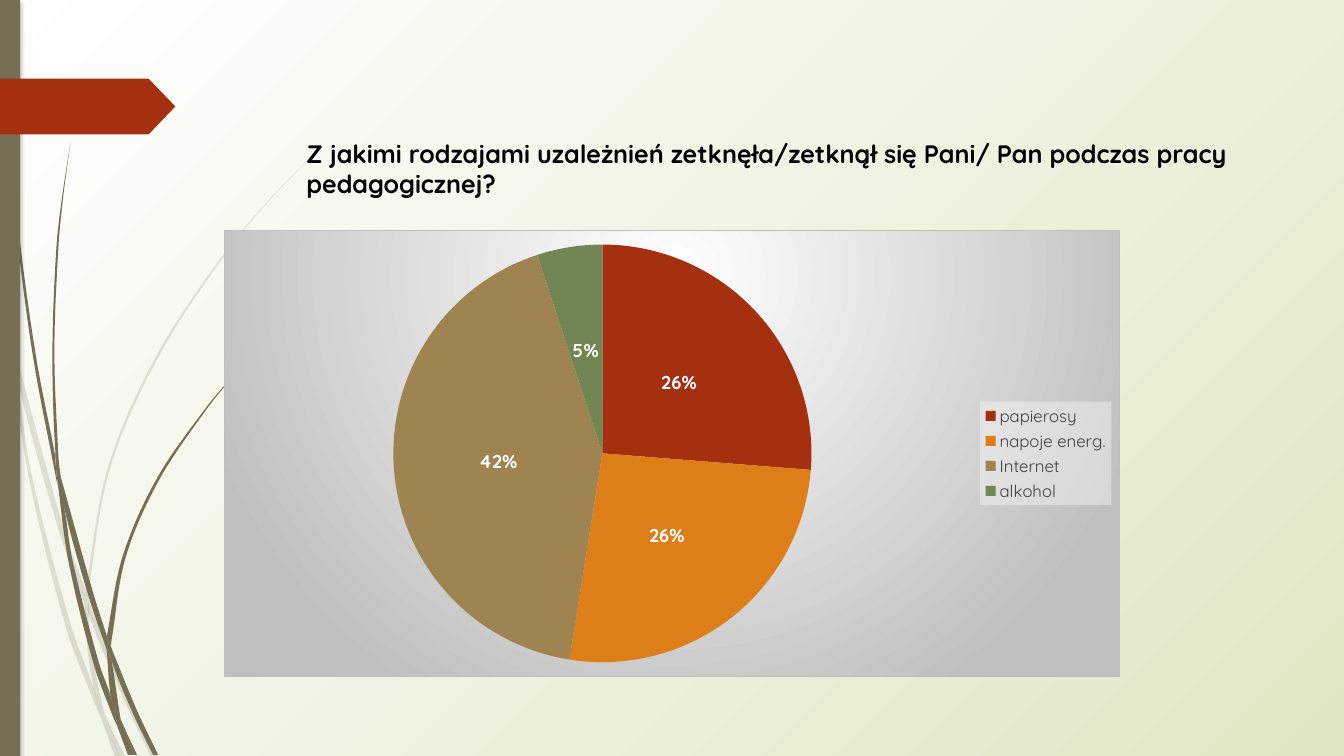
from itertools import pairwise
from lxml import etree
from pptx import Presentation
from pptx.chart.data import CategoryChartData
from pptx.dml.color import RGBColor
from pptx.enum.chart import XL_CHART_TYPE as ChartType, XL_LABEL_POSITION as LabelPosition
from pptx.enum.chart import XL_LEGEND_POSITION as LegendPosition
from pptx.enum.shapes import MSO_SHAPE as Shape
from pptx.enum.text import MSO_ANCHOR as Anchor, PP_ALIGN as Align
from pptx.oxml import parse_xml
from pptx.oxml.ns import nsdecls, qn
from pptx.util import Cm, Pt

QUESTION = "Z jakimi rodzajami uzależnień zetknęła/zetknął się Pani/ Pan podczas pracy pedagogicznej?"
FONT = "Quicksand"
WHITE = RGBColor(0xFF, 0xFF, 0xFF)
BLACK = RGBColor(0, 0, 0)
GREY = RGBColor(0x40, 0x40, 0x40)
SILVER = RGBColor(0xBF, 0xBF, 0xBF)
PALE_GREEN = RGBColor(0xDF, 0xE7, 0xC4)
TAUPE = RGBColor(0x76, 0x6F, 0x54)
RED = RGBColor(0xA5, 0x30, 0x10)
ORANGE = RGBColor(0xDE, 0x7E, 0x18)
SAND = RGBColor(0x9F, 0x83, 0x51)
GREEN = RGBColor(0x72, 0x86, 0x53)

ADDICTIONS = [
    ("papierosy", 26, RED),
    ("napoje energ.", 26, ORANGE),
    ("Internet", 42, SAND),
    ("alkohol", 5, GREEN),
]

STEM_UNIT = Cm(0.0254)
PALE_STEMS = [
    ([(0, 299), (10, 344), (11, 350)], [(0, 282), (8, 322), (11, 350)]),
    ([(14, 345), (17, 376), (57, 522), (84, 599)], [(14, 345), (62, 520), (85, 586)]),
    ([(88, 596), (88, 610), (123, 694), (150, 751)],
     [(88, 596), (92, 607), (127, 691), (155, 751)]),
    ([(105, 711), (119, 751)], [(105, 711), (124, 751)]),
    ([(11, 350), (28, 470), (65, 621), (92, 693), (101, 714)],
     [(11, 350), (17, 376), (31, 469), (70, 619), (93, 683), (99, 707), (101, 714)]),
    ([(84, 599), (87, 646), (93, 683), (96, 692), (105, 711)],
     [(84, 599), (88, 608), (88, 610), (91, 646), (103, 706), (105, 711)]),
    ([(312, 153), (289, 175), (268, 197), (228, 244), (158, 348), (108, 461), (85, 584), (85, 586)],
     [(312, 153), (290, 175), (268, 198), (229, 245), (160, 349), (110, 462), (88, 584), (88, 596)]),
    ([(101, 714), (114, 751)], [(101, 714), (119, 751)]),
    ([(85, 586), (84, 599), (88, 608), (88, 610)], [(85, 586), (88, 596), (88, 610)]),
    ([(93, 683), (99, 707), (101, 714), (119, 751)],
     [(93, 683), (96, 692), (105, 711), (119, 751)]),
]
DARK_STEMS = [
    ([(3, 0), (4, 48), (7, 110), (17, 233), (33, 355), (56, 476), (57, 481)],
     [(4, 0), (5, 48), (8, 109), (19, 232), (36, 355), (55, 453), (55, 457), (57, 481)]),
    ([(60, 472), (64, 505), (88, 592), (106, 645)],
     [(60, 472), (93, 590), (106, 631), (106, 633), (106, 645)]),
    ([(110, 641), (111, 656), (132, 708), (152, 749)],
     [(110, 641), (113, 649), (136, 705), (157, 749)]),
    ([(57, 477), (68, 557), (93, 659), (111, 708), (117, 722)],
     [(57, 477), (64, 505), (72, 556), (98, 657), (110, 691), (116, 717), (117, 722)]),
    ([(70, 141), (62, 193), (56, 245), (52, 349), (55, 449), (60, 471), (60, 472)],
     [(70, 141), (63, 193), (58, 245), (54, 349), (58, 453), (60, 472)]),
    ([(122, 719), (133, 749)], [(122, 719), (136, 749)]),
    ([(55, 449), (55, 453), (57, 477), (64, 505)], [(55, 449), (60, 472), (64, 505)]),
    ([(260, 344), (245, 358), (231, 373), (204, 405), (156, 474), (122, 551), (106, 631)],
     [(261, 344), (245, 359), (231, 374), (205, 406), (158, 476), (125, 552), (111, 633), (110, 641)]),
    ([(117, 722), (127, 749)], [(117, 722), (131, 749)]),
    ([(106, 645), (110, 691), (116, 706), (122, 719)],
     [(106, 645), (109, 651), (111, 656), (120, 715), (122, 719)]),
    ([(106, 631), (106, 645), (109, 650), (111, 656)], [(106, 631), (110, 641), (111, 656)]),
    ([(110, 691), (116, 717), (117, 722), (130, 749)],
     [(110, 691), (116, 706), (122, 719), (133, 749)]),
]


def curve_points(knots):
    last = len(knots) - 1
    slopes = []
    for index in range(len(knots)):
        (x0, y0), (x1, y1) = knots[max(index - 1, 0)], knots[min(index + 1, last)]
        slopes.append((x1 - x0) / (y1 - y0))
    points = [knots[0]]
    for ((x0, y0), (x1, y1)), (m0, m1) in zip(pairwise(knots), pairwise(slopes)):
        third = (y1 - y0) / 3
        points += [(x0 + m0 * third, y0 + third), (x1 - m1 * third, y1 - third), (x1, y1)]
    return points


def bend_lines(lines):
    for start in range(0, len(lines), 3):
        curve = etree.Element(qn("a:cubicBezTo"))
        lines[start].addprevious(curve)
        for line in lines[start:start + 3]:
            curve.append(line[0])
            line.getparent().remove(line)


def paint(shape, color):
    shape.shadow.inherit = False
    shape.fill.solid()
    shape.fill.fore_color.rgb = color
    shape.line.fill.background()


def draw_stem(page, left_edge, right_edge, opacity):
    down, up = curve_points(left_edge), curve_points(right_edge)[::-1]
    points = [(x * STEM_UNIT, y * STEM_UNIT) for x, y in down + up]
    builder = page.shapes.build_freeform(*points[0], scale=1.0)
    builder.add_line_segments(points[1:], close=True)
    stem = builder.convert_to_shape()
    lines = list(stem.element.iter(qn("a:lnTo")))
    bend_lines(lines[:len(down) - 1])
    bend_lines(lines[len(down):len(down) + len(up) - 1])
    paint(stem, TAUPE)
    if opacity < 100:
        color = stem.element.spPr.find(f"{qn('a:solidFill')}/{qn('a:srgbClr')}")
        etree.SubElement(color, qn("a:alpha"), val=str(opacity * 1000))


def draw_decoration(page, deck):
    for stems, opacity in ((PALE_STEMS, 20), (DARK_STEMS, 100)):
        for left_edge, right_edge in stems:
            draw_stem(page, left_edge, right_edge, opacity)
    bar = page.shapes.add_shape(Shape.RECTANGLE, 0, 0, Cm(0.51), deck.slide_height)
    paint(bar, TAUPE)
    bar.element.spPr.find(qn("a:effectLst")).append(parse_xml(
        f'<a:outerShdw {nsdecls("a")} blurRad="38100" dist="25400" dir="5400000" rotWithShape="0">'
        '<a:srgbClr val="000000"><a:alpha val="25000"/></a:srgbClr></a:outerShdw>'))
    arrow = page.shapes.add_shape(Shape.PENTAGON, 0, Cm(1.98), Cm(4.42), Cm(1.41))
    arrow.adjustments[0] = 0.48
    paint(arrow, RED)


def write_title(page):
    title = page.shapes.title
    title.left, title.top, title.width, title.height = Cm(7.47), Cm(3.35), Cm(24.54), Cm(1.78)
    frame = title.text_frame
    frame.text = QUESTION
    frame.word_wrap = True
    frame.vertical_anchor = Anchor.TOP
    para = frame.paragraphs[0]
    para.alignment = Align.LEFT
    set_font(para.runs[0].font, 18, BLACK, True)


def set_font(font, size, color, bold=False):
    font.name = FONT
    font.size = Pt(size)
    font.bold = bold
    font.color.rgb = color


def fill_chart(chart):
    chart.element.find(qn("c:chart")).addnext(parse_xml(
        f'<c:spPr {nsdecls("c", "a")}><a:gradFill><a:gsLst>'
        f'<a:gs pos="0"><a:srgbClr val="{WHITE}"/></a:gs>'
        f'<a:gs pos="100000"><a:srgbClr val="{SILVER}"/></a:gs></a:gsLst>'
        '<a:path path="circle"><a:fillToRect l="50000" t="10000" r="50000" b="90000"/></a:path>'
        f'</a:gradFill><a:ln w="9525"><a:solidFill><a:srgbClr val="{SILVER}"/></a:solidFill></a:ln>'
        '</c:spPr>'))
    chart.legend._element.find(qn("c:txPr")).addprevious(parse_xml(
        f'<c:spPr {nsdecls("c", "a")}><a:solidFill><a:srgbClr val="{WHITE}">'
        '<a:alpha val="39000"/></a:srgbClr></a:solidFill><a:ln><a:noFill/></a:ln></c:spPr>'))


def draw_pie(page):
    data = CategoryChartData()
    data.categories = [name for name, _, _ in ADDICTIONS]
    data.add_series("Series 1", [share for _, share, _ in ADDICTIONS])
    chart = page.shapes.add_chart(
        ChartType.PIE, Cm(5.65), Cm(5.8), Cm(22.58), Cm(11.25), data).chart
    chart.has_title = False
    set_font(chart.font, 10, BLACK)
    chart.has_legend = True
    chart.legend.position = LegendPosition.RIGHT
    chart.legend.include_in_layout = False
    set_font(chart.legend.font, 12, GREY)
    plot = chart.plots[0]
    plot.vary_by_categories = True
    series = plot.series[0]
    for index, (_, _, color) in enumerate(ADDICTIONS):
        slice_format = series.points[index].format
        slice_format.fill.solid()
        slice_format.fill.fore_color.rgb = color
        slice_format.line.fill.background()
    labels = series.data_labels
    labels.show_value = False
    labels.show_percentage = True
    labels.number_format = "0%"
    labels.number_format_is_linked = False
    labels.position = LabelPosition.CENTER
    set_font(labels.font, 13.3, WHITE, True)
    fill_chart(chart)


deck = Presentation()
deck.slide_width, deck.slide_height = Cm(33.87), Cm(19.05)
page = deck.slides.add_slide(deck.slide_layouts[5])
backdrop = page.background.fill
backdrop.gradient()
backdrop.gradient_angle = 315
for stop, color in zip(backdrop.gradient_stops, (WHITE, PALE_GREEN)):
    stop.color.rgb = color
draw_decoration(page, deck)
write_title(page)
draw_pie(page)
deck.save("out.pptx")
